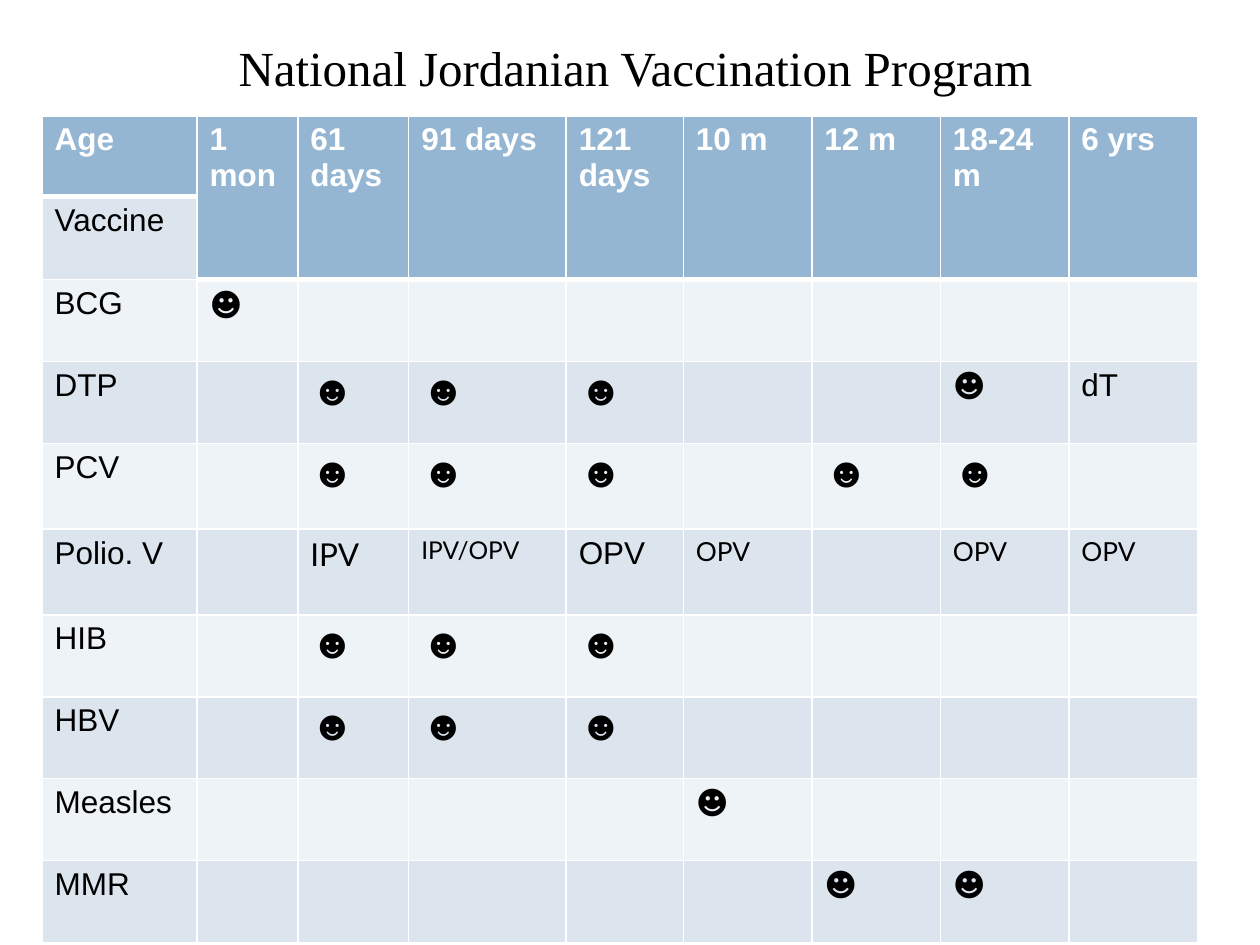
from lxml import etree
from pptx import Presentation
from pptx.dml.color import RGBColor
from pptx.enum.text import PP_ALIGN
from pptx.oxml.ns import qn
from pptx.util import Inches, Pt

CENTER = PP_ALIGN.CENTER
WIDE, HIGH = 10, 7.5
HEAD, DARK, PALE = "94B6D2", "DCE5EE", "EEF3F7"
WHITE, BLACK = "FFFFFF", "000000"

# Column and row sizes, as parts of the table's box
COLS = [1.23, 0.8, 0.88, 1.25, 0.93, 1.02, 1.02, 1.02, 1.02]
ROWS = [0.64] * 2 + [0.65] * 2 + [0.68] * 2 + [0.65] * 4

# Text styles: font and size
PLAIN = ("Arial", 18)
SMALL = ("Calibri", 18)
LARGE = ("Times New Roman", 24)
FACE = "☻"
SMILE, GRIN = (FACE, SMALL), (FACE, LARGE)
DOSES = {2: GRIN, 3: GRIN, 4: GRIN}
OPV = ("OPV", ("Lato", 15))

AGES = ["Age", "1 mon", "61 days", "91 days", "121 days",
        "10 m", "12 m", "18-24 m", "6 yrs"]

# Each vaccine with its marks, keyed by column
PLAN = [
    ("BCG", {1: SMILE}),
    ("DTP", {**DOSES, 7: SMILE, 8: ("dT", PLAIN)}),
    ("PCV", {**DOSES, 6: GRIN, 7: GRIN}),
    ("Polio. V", {2: ("IPV", ("Lato", 18)), 3: ("IPV/OPV", ("Lato", 14)),
                  4: ("OPV", PLAIN), 5: OPV, 7: OPV, 8: OPV}),
    ("HIB", DOSES),
    ("HBV", DOSES),
    ("Measles", {5: SMILE}),
    ("MMR", {6: SMILE, 7: SMILE}),
]


def paint(text):
    return RGBColor.from_string(text)


def write(frame, text, style, tint=BLACK, bold=False):
    para = frame.paragraphs[0]
    para.text = text
    font = para.font
    font.name, font.size = style[0], Pt(style[1])
    font.bold = bold
    font.color.rgb = paint(tint)
    return para


def dress(cell, fill, base=1):
    """Draw white borders, then the fill."""
    props = cell._tc.get_or_add_tcPr()
    for side, width in zip("LRTB", (1, 1, 1, base)):
        line = etree.SubElement(props, qn("a:ln" + side), w=str(Pt(width)))
        solid = etree.SubElement(line, qn("a:solidFill"))
        etree.SubElement(solid, qn("a:srgbClr"), val=WHITE)
    cell.fill.solid()
    cell.fill.fore_color.rgb = paint(fill)


def add_title(slide, left, top, width, height):
    box = slide.shapes.add_textbox(*map(Inches, (left, top, width, height)))
    box.text_frame.word_wrap = True
    para = write(box.text_frame, "National Jordanian Vaccination Program",
                 ("Times New Roman", 28))
    para.alignment = CENTER


def add_plan(slide, left, top, width, height):
    table = slide.shapes.add_table(
        len(ROWS), len(COLS),
        *map(Inches, (left, top, width, height))).table
    for col, part in zip(table.columns, COLS):
        col.width = Inches(width * part / sum(COLS))
    for row, part in zip(table.rows, ROWS):
        row.height = Inches(height * part / sum(ROWS))

    # Header: ages span two rows, beside the "Vaccine" cell
    for c, age in enumerate(AGES):
        cell, below = table.cell(0, c), table.cell(1, c)
        dress(cell, HEAD, 3)
        write(cell.text_frame, age, PLAIN, WHITE, True)
        if c:
            dress(below, HEAD, 3)
            cell.merge(below)
        else:
            dress(below, DARK)
            write(below.text_frame, "Vaccine", PLAIN)

    # Body: banded rows of marks
    for r, (name, marks) in enumerate(PLAN, 2):
        items = {0: (name, PLAIN), **marks}
        for c in range(len(COLS)):
            cell = table.cell(r, c)
            dress(cell, DARK if r % 2 else PALE)
            if c in items:
                write(cell.text_frame, *items[c])


def main():
    deck = Presentation()
    deck.slide_width, deck.slide_height = Inches(WIDE), Inches(HIGH)
    slide = deck.slides.add_slide(deck.slide_layouts[6])
    edge = WIDE / 30
    add_plan(slide, edge, 0.92, sum(COLS), sum(ROWS))
    add_title(slide, edge, HIGH / 30, 9.42, 0.57)
    deck.save("out.pptx")


if __name__ == "__main__":
    main()
